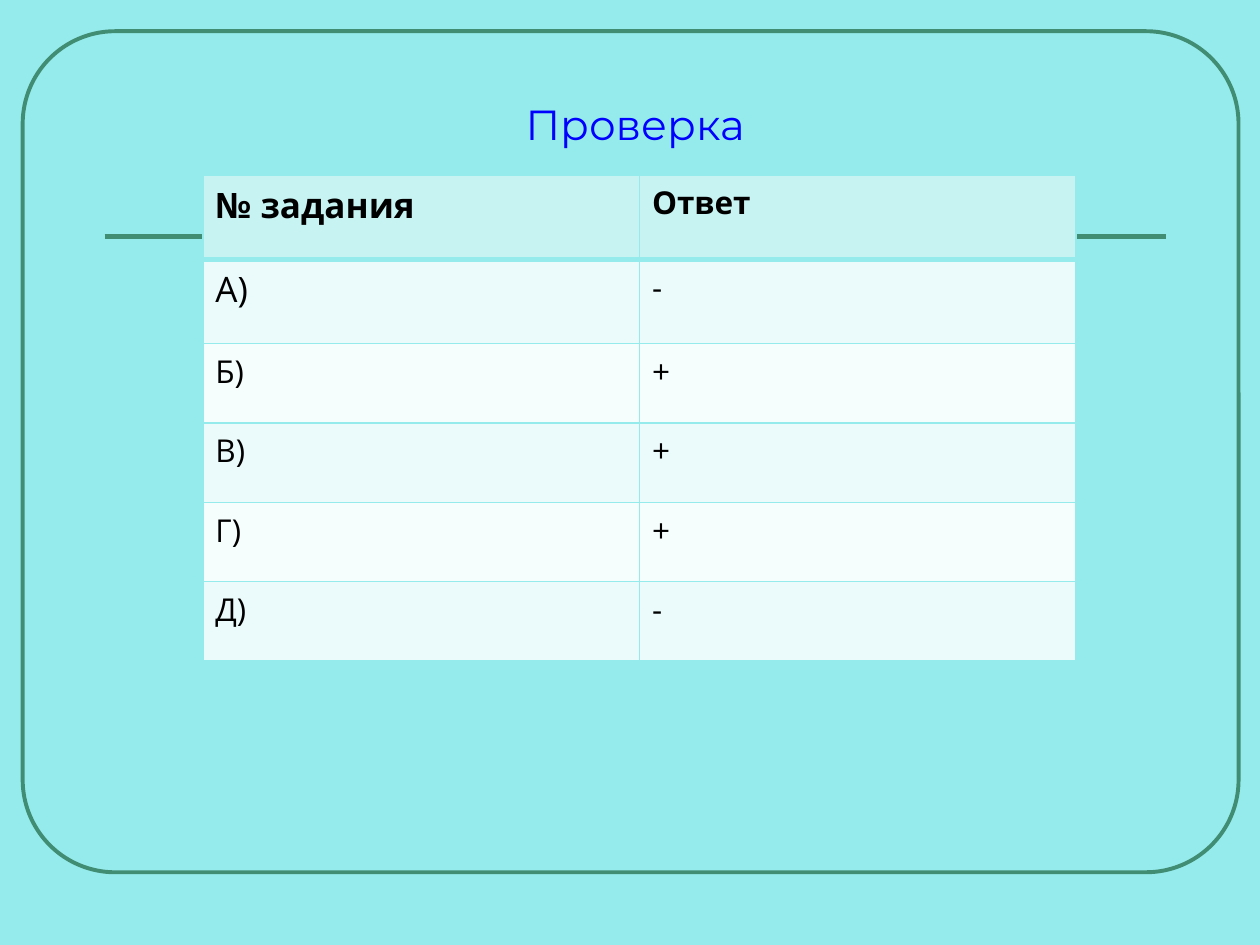
from lxml import etree
from pptx import Presentation, util as u
from pptx.dml.color import RGBColor
from pptx.enum import shapes, text
from pptx.oxml.ns import qn

W, H = u.Inches(10), u.Inches(7.5)
BACK, GREEN, BLUE, BLACK = "95EBEB", "418D74", "0000FF", "000000"
HEAD, BANDS = "C8F3F3", ("EBFAFA", "F5FDFD")
ROWS = [("№ задания", "Ответ"), ("А)", "-"), ("Б)", "+"),
        ("В)", "+"), ("Г)", "+"), ("Д)", "-")]


def rgb(value):
    return RGBColor.from_string(value)


def box(left, top, width, height):
    return int(left * W), int(top * H), int(width * W), int(height * H)


def paint(fill, colour):
    fill.solid()
    fill.fore_color.rgb = rgb(colour)


def style(p, font, size, colour, bold=False):
    for r in p.runs:
        r.font.name, r.font.size, r.font.bold = font, u.Pt(size), bold
        r.font.color.rgb = rgb(colour)


def add_frame(s, area):
    sp = s.shapes.add_shape(shapes.MSO_SHAPE.ROUNDED_RECTANGLE, *area)
    sp.adjustments[0] = 0.11
    sp.shadow.inherit = False
    sp.fill.background()
    sp.line.color.rgb = rgb(GREEN)
    sp.line.width = u.Pt(2.25)


def add_rule(s, area):
    left, top, width, height = area
    line = s.shapes.add_connector(shapes.MSO_CONNECTOR.STRAIGHT,
                                  left, top, left + width, top + height)
    line.line.color.rgb = rgb(GREEN)
    line.line.width = u.Pt(3)
    etree.SubElement(line._element.spPr, qn("a:effectLst"))


def add_title(s, area):
    tf = s.shapes.add_textbox(*area).text_frame
    tf.word_wrap = True
    tf.vertical_anchor = text.MSO_ANCHOR.BOTTOM
    tf.text = "Проверка"
    p = tf.paragraphs[0]
    p.alignment = text.PP_ALIGN.CENTER
    style(p, "Montserrat", 24, BLUE)


def add_borders(cell, widths):
    tcPr = cell._tc.get_or_add_tcPr()
    for side, width in widths.items():
        ln = etree.SubElement(tcPr, qn("a:ln" + side), w=str(u.Pt(width)))
        solid = etree.SubElement(ln, qn("a:solidFill"))
        etree.SubElement(solid, qn("a:srgbClr"), val=BACK)


def add_answers(s, area):
    table = s.shapes.add_table(len(ROWS), len(ROWS[0]), *area).table
    for i, row in enumerate(ROWS):
        table.rows[i].height = u.Inches(0.67 if i < 2 else 0.63)
        for j, label in enumerate(row):
            cell = table.cell(i, j)
            cell.text = label
            size = 20 if i < 2 and j == 0 else 18
            style(cell.text_frame.paragraphs[0], "Open Sans", size, BLACK, i == 0)
            add_borders(cell, {"L": 1, "R": 1, "T": 3 if i == 1 else 1,
                               "B": 3 if i == 0 else 1})
            paint(cell.fill, BANDS[(i - 1) % 2] if i else HEAD)


def main():
    prs = Presentation()
    prs.slide_width, prs.slide_height = W, H
    s = prs.slides.add_slide(prs.slide_layouts[6])
    paint(s.background.fill, BACK)
    add_frame(s, box(0.018, 0.033, 0.965, 0.89))
    add_rule(s, box(0.083, 0.25, 0.842, 0))
    add_title(s, box(0.083, 0.077, 0.842, 0.087))
    add_answers(s, box(0.161, 0.185, 0.693, 0.515))
    prs.save("out.pptx")


if __name__ == "__main__":
    main()
